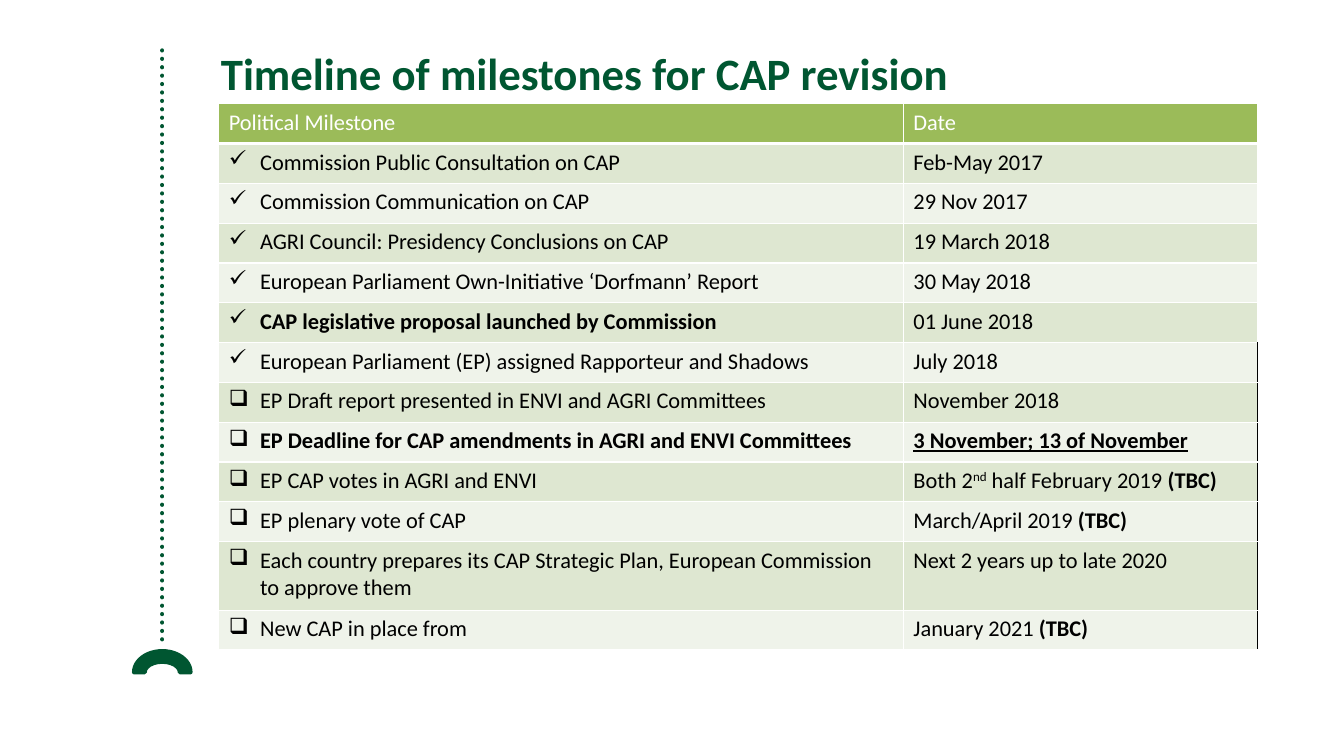
"""Build the slide with the timeline of milestones for the CAP revision."""
from lxml.etree import SubElement
from pptx import Presentation
from pptx.dml.color import RGBColor
from pptx.enum.dml import MSO_LINE
from pptx.enum.shapes import MSO_CONNECTOR, MSO_SHAPE
from pptx.enum.text import MSO_ANCHOR, PP_ALIGN
from pptx.oxml.ns import qn
from pptx.util import Inches, Pt

COLORS = {
    "green": "005631",
    "header": "9BBB59",
    "band_dark": "DEE7D1",
    "band_light": "EFF3EA",
    "white": "FFFFFF",
    "black": "000000",
}
FONT = "Calibri"
DONE, OPEN = "✓", "❑"
TBC = ("(TBC)", "bold")

MILESTONES = [
    (DONE, [("Commission Public Consultation on CAP", "")], [("Feb-May 2017", "")]),
    (DONE, [("Commission Communication on CAP", "")], [("29 Nov 2017", "")]),
    (DONE, [("AGRI Council: Presidency Conclusions on CAP", "")], [("19 March 2018", "")]),
    (DONE, [("European Parliament Own-Initiative ‘Dorfmann’ Report", "")], [("30 May 2018", "")]),
    (DONE, [("CAP legislative proposal launched by Commission", "bold")], [("01 June 2018", "")]),
    (DONE, [("European Parliament (EP) assigned Rapporteur and Shadows", "")], [("July 2018", "")]),
    (OPEN, [("EP Draft report presented in ENVI and AGRI Committees", "")], [("November 2018", "")]),
    (OPEN, [("EP Deadline for CAP amendments in AGRI and ENVI Committees", "bold")],
     [("3 November; 13 of November", "bold underline")]),
    (OPEN, [("EP CAP votes in AGRI and ENVI", "")],
     [("Both 2", ""), ("nd", "superscript"), (" half February 2019 ", ""), TBC]),
    (OPEN, [("EP plenary vote of CAP", "")], [("March/April 2019 ", ""), TBC]),
    (OPEN, [("Each country prepares its CAP Strategic Plan, "
             "European Commission to approve them", "")],
     [("Next 2 years up to late 2020", "")]),
    (OPEN, [("New CAP in place from", "")], [("January 2021 ", ""), TBC]),
]
FIRST_BLACK_EDGE_ROW = 6
TWO_LINE_ROW = 11


def rgb(name):
    return RGBColor.from_string(COLORS[name])


def fill_cell(cell, runs, fill, text_color, bullet, borders):
    cell.fill.solid()
    cell.fill.fore_color.rgb = rgb(fill)
    paragraph = cell.text_frame.paragraphs[0]
    if bullet:
        properties = paragraph._p.get_or_add_pPr()
        properties.set("marL", str(Inches(0.31)))
        properties.set("indent", str(-Inches(0.31)))
        SubElement(properties, qn("a:buChar"), char=bullet)
    paragraph.font.name = FONT
    paragraph.font.size = Pt(16)
    for text, style in runs:
        run = paragraph.add_run()
        run.text = text
        run.font.bold = "bold" in style
        run.font.color.rgb = rgb(text_color)
        if "underline" in style:
            run.font.underline = True
        if "superscript" in style:
            run.font._element.set("baseline", "30000")
    cell_properties = cell._tc.get_or_add_tcPr()
    for position, (side, (color, width)) in enumerate(borders.items()):
        edge = SubElement(cell_properties, qn(f"a:ln{side}"), w=str(Pt(width)))
        edge_fill = SubElement(edge, qn("a:solidFill"))
        SubElement(edge_fill, qn("a:srgbClr"), val=COLORS[color])
        cell_properties.insert(position, edge)


prs = Presentation()
prs.slide_width = Inches(13.33)
prs.slide_height = Inches(7.5)
slide = prs.slides.add_slide(prs.slide_layouts[5])

dotted_rule = slide.shapes.add_connector(
    MSO_CONNECTOR.STRAIGHT, Inches(1.61), Inches(0.5), Inches(1.61), Inches(6.41))
dotted_rule.line.color.rgb = rgb("green")
dotted_rule.line.width = Pt(3)
dotted_rule.line.dash_style = MSO_LINE.ROUND_DOT
rule_properties = dotted_rule._element.spPr
rule_properties.find(qn("a:ln")).set("cap", "rnd")
SubElement(rule_properties, qn("a:effectLst"))

arch = slide.shapes.add_shape(
    MSO_SHAPE.BLOCK_ARC, Inches(1.33), Inches(6.46), Inches(0.56), Inches(0.42))
arch.shadow.inherit = False
arch.fill.solid()
arch.fill.fore_color.rgb = rgb("green")
arch.line.color.rgb = rgb("green")
arch.line.width = Pt(3)

title = slide.shapes.title
title.left, title.top = Inches(2.09), Inches(0.4)
title.width, title.height = Inches(10.67), Inches(1.25)
title.text_frame.text = "Timeline of milestones for CAP revision"
title.text_frame.vertical_anchor = MSO_ANCHOR.TOP
heading = title.text_frame.paragraphs[0]
heading.alignment = PP_ALIGN.LEFT
heading.font.name = FONT
heading.font.size = Pt(32)
heading.font.bold = True
heading.font.color.rgb = rgb("green")

timeline = slide.shapes.add_table(
    len(MILESTONES) + 1, 2, Inches(2.17), Inches(1.03), Inches(10.3), Inches(5.48)).table
timeline.horz_banding = False
timeline.columns[0].width = Inches(6.79)
timeline.columns[1].width = Inches(3.51)
for index, row in enumerate(timeline.rows):
    row.height = Inches(0.68 if index == TWO_LINE_ROW else 0.395)

white_edges = {side: ("white", 1) for side in "LRTB"}
header_edges = white_edges | {"B": ("white", 3)}
for column, label in enumerate(["Political Milestone", "Date"]):
    fill_cell(timeline.cell(0, column), [(label, "")], "header", "white", None, header_edges)

for index, (status, milestone, date) in enumerate(MILESTONES, start=1):
    band = "band_dark" if index % 2 else "band_light"
    right_edge = "black" if index >= FIRST_BLACK_EDGE_ROW else "white"
    date_edges = white_edges | {"R": (right_edge, 1)}
    fill_cell(timeline.cell(index, 0), milestone, band, "black", status, white_edges)
    fill_cell(timeline.cell(index, 1), date, band, "black", None, date_edges)

prs.save("out.pptx")
